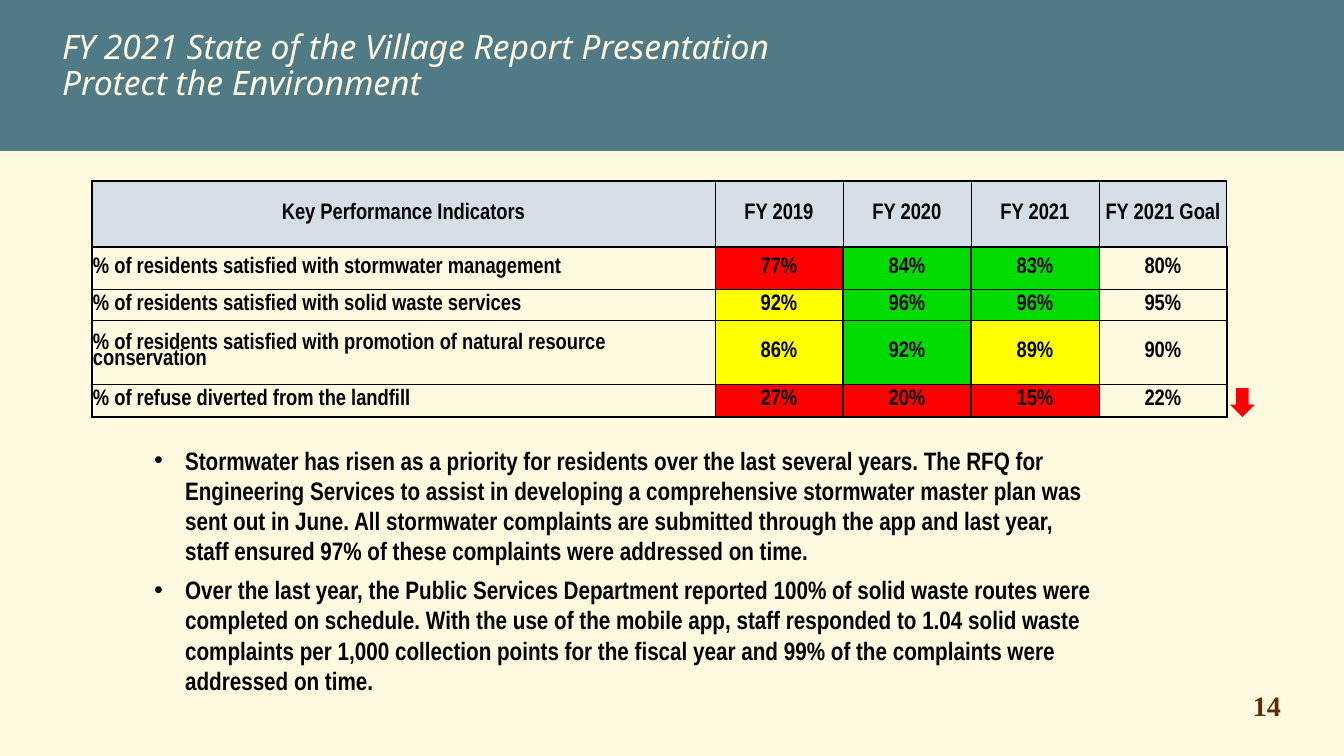
from lxml import etree
from pptx import Presentation
from pptx.dml.color import RGBColor
from pptx.enum.shapes import MSO_SHAPE
from pptx.enum.text import MSO_ANCHOR, MSO_AUTO_SIZE, PP_ALIGN
from pptx.oxml.ns import qn
from pptx.util import Emu, Pt

EMU_PER_PX = 914400 / 100.8
RECTANGLE, DOWN_ARROW = MSO_SHAPE.RECTANGLE, MSO_SHAPE.DOWN_ARROW
TOP, MIDDLE = MSO_ANCHOR.TOP, MSO_ANCHOR.MIDDLE
LEFT, CENTER = PP_ALIGN.LEFT, PP_ALIGN.CENTER
NO_FIT = MSO_AUTO_SIZE.NONE

CREAM = RGBColor(0xFF, 0xF9, 0xDF)
TEAL = RGBColor(0x50, 0x7A, 0x85)
BROWN = RGBColor(0x5D, 0x2B, 0x00)
BLACK = RGBColor(0x00, 0x00, 0x00)
HEADER_BLUE = RGBColor(0xD3, 0xDE, 0xE7)
RED = RGBColor(0xFF, 0x00, 0x00)
YELLOW = RGBColor(0xFF, 0xFF, 0x00)
GREEN = RGBColor(0x00, 0xDC, 0x00)

TITLE_FONT = {"name": "Noto Sans", "size": Pt(24), "italic": True, "bold": False}
NUMBER_FONT = {"name": "Times New Roman", "size": Pt(20), "bold": True}
TABLE_FONT = {"name": "Arial Narrow", "size": Pt(16), "bold": True}
BODY_FONT = {"name": "Arial Narrow", "size": Pt(18), "bold": True}

TITLE = "FY 2021 State of the Village Report Presentation\nProtect the Environment"
HEADINGS = ("Key Performance Indicators", "FY 2019", "FY 2020", "FY 2021", "FY 2021 Goal")
INDICATORS = (
    (("% of residents satisfied with stormwater management", "77%", "84%", "83%", "80%"),
     (RED, GREEN, GREEN)),
    (("% of residents satisfied with solid waste services", "92%", "96%", "96%", "95%"),
     (YELLOW, GREEN, GREEN)),
    (("% of residents satisfied with promotion of natural resource conservation",
      "86%", "92%", "89%", "90%"), (YELLOW, GREEN, YELLOW)),
    (("% of refuse diverted from the landfill", "27%", "20%", "15%", "22%"),
     (RED, RED, RED)),
)
FINDINGS = (
    "Stormwater has risen as a priority for residents over the last several years. "
    "The RFQ for Engineering Services to assist in developing a comprehensive stormwater "
    "master plan was sent out in June. All stormwater complaints are submitted through "
    "the app and last year, staff ensured 97% of these complaints were addressed on time.",
    "Over the last year, the Public Services Department reported 100% of solid waste "
    "routes were completed on schedule. With the use of the mobile app, staff responded "
    "to 1.04 solid waste complaints per 1,000 collection points for the fiscal year and "
    "99% of the complaints were addressed on time.",
)
COLUMN_WIDTHS = (623, 128, 128, 128, 128)
ROW_HEIGHTS = (66, 42, 31, 64, 33)
HEADER_VERTICALS = (1.5, 0.5, 0.5, 0.5, 0.5, 1)
BODY_VERTICALS = (1.5, 0.5, 1.5, 1.5, 0.5, 1.5)


def px(length):
    """Turn pixels into EMU."""
    return Emu(round(length * EMU_PER_PX))


def apply(target, values):
    """Set each attribute named in values on target."""
    for name, value in values.items():
        setattr(target, name, value)


def place(part, box):
    """Move a part to its box of left, top, width and height."""
    apply(part, dict(zip(("left", "top", "width", "height"), map(px, box))))


def write(frame, text, font, color, paragraph_format):
    """Fill a text frame with one formatted paragraph per line of text."""
    frame.text = text
    for paragraph in frame.paragraphs:
        apply(paragraph, paragraph_format)
        for run in paragraph.runs:
            apply(run.font, font)
            run.font.color.rgb = color


def add_block(slide, kind, box, color):
    """Add a plain filled shape without outline or shadow."""
    block = slide.shapes.add_shape(kind, *map(px, box))
    block.shadow.inherit = False
    block.fill.solid()
    block.fill.fore_color.rgb = color
    block.line.fill.background()
    return block


def add_header(slide, box):
    """Put the title on a band that lies behind everything else."""
    left, top, width, height = box
    band = add_block(slide, RECTANGLE, box, TEAL)
    slide.shapes._spTree.insert(2, band._element)
    title = slide.shapes.title
    place(title, (left + 52, top + 25, width - 115, height - 59))
    apply(title.text_frame, {"vertical_anchor": TOP, "auto_size": NO_FIT, "word_wrap": True})
    write(title.text_frame, TITLE, TITLE_FONT, CREAM,
          {"alignment": LEFT, "line_spacing": 0.9, "space_before": Pt(0)})


def set_borders(cell, widths):
    """Draw the left, right, top and bottom borders of a cell in points."""
    properties = cell._tc.get_or_add_tcPr()
    for side, width in zip(("a:lnL", "a:lnR", "a:lnT", "a:lnB"), widths):
        line = etree.SubElement(properties, qn(side), w=str(Pt(width)))
        fill = etree.SubElement(line, qn("a:solidFill"))
        etree.SubElement(fill, qn("a:srgbClr"), val=str(BLACK))


def format_cell(cell, row, column, text, color):
    """Write one indicator cell and give it its borders and fill."""
    verticals = BODY_VERTICALS if row else HEADER_VERTICALS
    above = 0.5 if row > 1 else 1.5 if row or not column else 1
    below = 0.5 if 0 < row < len(INDICATORS) else 1.5
    set_borders(cell, (*verticals[column:column + 2], above, below))
    apply(cell, {"vertical_anchor": MIDDLE, "margin_left": px(1), "margin_right": px(1),
                 "margin_top": px(1), "margin_bottom": 0})
    alignment = CENTER if column or not row else LEFT
    write(cell.text_frame, text, TABLE_FONT, BLACK,
          {"alignment": alignment, "line_spacing": 0.8})
    if color is None:
        cell.fill.background()
    else:
        cell.fill.solid()
        cell.fill.fore_color.rgb = color


def add_indicators(slide, box):
    """Add the indicator table and the falling trend arrow beside its last row."""
    left, top, width, height = box
    rows = ((HEADINGS, (HEADER_BLUE,) * len(HEADINGS)),
            *((texts, (None, *colors, None)) for texts, colors in INDICATORS))
    table = slide.shapes.add_table(len(rows), len(HEADINGS), *map(px, box)).table
    apply(table, {"first_row": False, "horz_banding": False})
    for column, column_width in zip(table.columns, COLUMN_WIDTHS):
        column.width = px(column_width)
    for row, row_height in zip(table.rows, ROW_HEIGHTS):
        row.height = px(row_height)
    for row, (texts, colors) in enumerate(rows):
        for column, (text, color) in enumerate(zip(texts, colors)):
            format_cell(table.cell(row, column), row, column, text, color)
    add_block(slide, DOWN_ARROW, (left + width + 3, top + height - 29, 25, 29), RED)


def add_findings(slide, box):
    """Fill the body placeholder with the bulleted findings."""
    body = slide.placeholders[1]
    place(body, box)
    apply(body.text_frame, {"vertical_anchor": TOP, "auto_size": NO_FIT, "word_wrap": True})
    write(body.text_frame, "\n".join(FINDINGS), BODY_FONT, BLACK,
          {"alignment": LEFT, "space_before": Pt(0), "space_after": Pt(6)})
    for paragraph in body.text_frame.paragraphs:
        properties = paragraph._p.get_or_add_pPr()
        properties.set("marL", str(px(31)))
        properties.set("indent", str(-px(31)))
        etree.SubElement(properties, qn("a:buFont"), typeface="Arial")
        etree.SubElement(properties, qn("a:buChar"), char="•")


def add_page_number(slide, box):
    """Add the page number."""
    number = slide.shapes.add_textbox(*map(px, box))
    number.text_frame.word_wrap = True
    write(number.text_frame, "14", NUMBER_FONT, BROWN, {"alignment": LEFT})


def main():
    """Build the slide and save it."""
    presentation = Presentation()
    apply(presentation, {"slide_width": px(1344), "slide_height": px(756)})
    slide = presentation.slides.add_slide(presentation.slide_layouts[1])
    slide.background.fill.solid()
    slide.background.fill.fore_color.rgb = CREAM
    add_header(slide, (0, 0, 1344, 151))
    add_indicators(slide, (92, 181, sum(COLUMN_WIDTHS), sum(ROW_HEIGHTS)))
    add_findings(slide, (144, 440, 965, 263))
    add_page_number(slide, (1243, 684, 69, 44))
    presentation.save("out.pptx")


if __name__ == "__main__":
    main()
